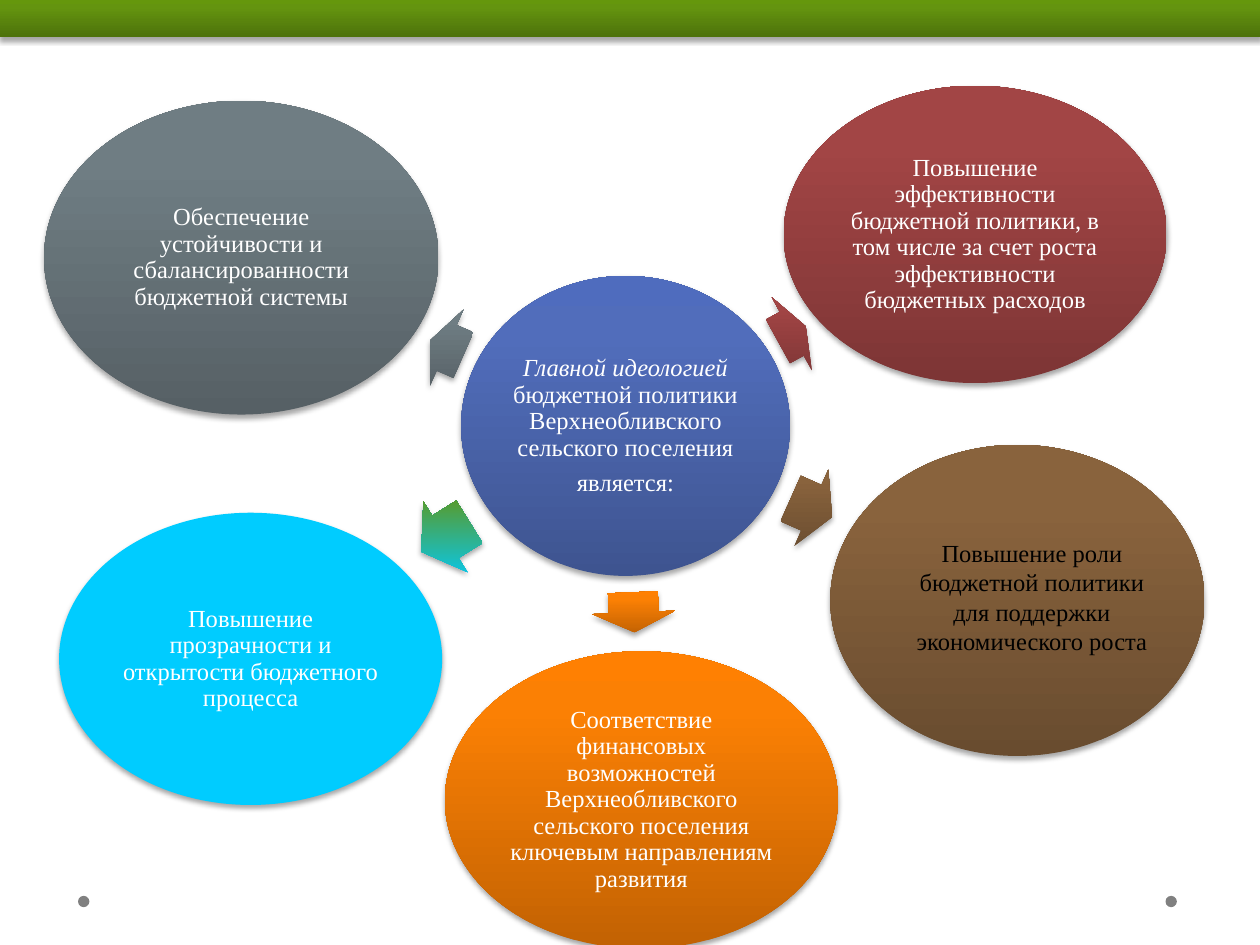
from copy import deepcopy
from math import sqrt

from lxml.etree import SubElement
from pptx import Presentation
from pptx.dml.color import RGBColor
from pptx.enum.shapes import MSO_SHAPE as Shape
from pptx.enum.text import MSO_ANCHOR as Anchor, PP_ALIGN as Align
from pptx.oxml.ns import qn
from pptx.util import Pt

WHITE = RGBColor(0xFF, 0xFF, 0xFF)
BLACK = RGBColor(0x00, 0x00, 0x00)
DOT_GREY = RGBColor(0x80, 0x80, 0x80)
CYAN = RGBColor(0x00, 0xCC, 0xFF)
GREEN_MID = RGBColor(0x64, 0x94, 0x0F)
GREEN_TOP = RGBColor(0x65, 0x97, 0x0C)

# Gradients run from the bottom of a shape to its top
GREEN = (RGBColor(0x4D, 0x72, 0x0B), GREEN_MID, GREEN_TOP)
CYAN_GREEN = (CYAN, GREEN_MID, GREEN_TOP)
BLUE = (RGBColor(0x3E, 0x54, 0x90), RGBColor(0x51, 0x6D, 0xBB), RGBColor(0x4F, 0x6C, 0xBE))
RED = (RGBColor(0x7D, 0x35, 0x35), RGBColor(0xA2, 0x45, 0x45), RGBColor(0xA4, 0x43, 0x43))
ORANGE = (RGBColor(0xC2, 0x62, 0x03), RGBColor(0xFB, 0x80, 0x04), RGBColor(0xFF, 0x80, 0x02))
BROWN = (RGBColor(0x69, 0x4C, 0x2F), RGBColor(0x89, 0x63, 0x3D), RGBColor(0x8B, 0x63, 0x3C))
GREY = (RGBColor(0x56, 0x60, 0x65), RGBColor(0x6F, 0x7D, 0x83), RGBColor(0x6F, 0x7E, 0x84))

CENTER_TEXT = [
    [("Главной идеологией ", True),
     ("бюджетной политики Верхнеобливского сельского поселения", False)],
    [("является:", False)],
]

# arrow box, arrow rotation, arrow fill, middle stop, ellipse box, ellipse fill, text
GOALS = [
    ((443.5, 167, 18, 47.5), 331.3, RED, 0.8, (447.8, 49, 218.9, 169.9), RED,
     "Повышение эффективности бюджетной политики, в том числе за счет роста "
     "эффективности бюджетных расходов"),
    ((350.6, 326.2, 23, 47.5), 87.6, ORANGE, 0.8, (254.2, 372.2, 224.6, 169.9), ORANGE,
     "Соответствие финансовых возможностей Верхнеобливского сельского поселения "
     "ключевым направлениям развития"),
    ((450.7, 266.4, 25.9, 47.5), 24, BROWN, 0.8, (474.5, 254.2, 213.8, 177.8), BROWN, None),
    ((238.3, 283, 32.4, 47.5), 148.1, CYAN_GREEN, 1, (33.8, 293, 218.9, 167), CYAN,
     "Повышение прозрачности и открытости бюджетного процесса"),
    ((244.8, 175, 20.9, 47.5), 203.6, GREY, 0.8, (25.2, 57.6, 225.4, 179.3), GREY,
     "Обеспечение устойчивости и сбалансированности бюджетной системы"),
]


class Painter:
    font_name = "Times New Roman"
    font_size = Pt(14)

    def __init__(self, slide):
        self.slide = slide

    def shape(self, kind, box, fill, middle=0.8, shadow=True):
        shape = self.slide.shapes.add_shape(kind, *map(Pt, box))
        shape.line.fill.background()
        shape.shadow.inherit = False
        if isinstance(fill, RGBColor):
            shape.fill.solid()
            shape.fill.fore_color.rgb = fill
        else:
            self.gradient(shape, fill, middle)
        if shadow:
            self.drop_shadow(shape)
        return shape

    def gradient(self, shape, colors, middle):
        """Fill upwards with three stops, upright whatever the rotation."""
        shape.fill.gradient()
        shape.fill.gradient_angle = 90
        gradient = shape._element.spPr.find(qn("a:gradFill"))
        gradient.set("rotWithShape", "0")
        stops = gradient.find(qn("a:gsLst"))
        stops.append(deepcopy(stops[-1]))
        for stop, color, position in zip(shape.fill.gradient_stops, colors, (0, middle, 1)):
            stop.color.rgb = color
            stop.position = position

    def drop_shadow(self, shape):
        effects = shape._element.spPr.find(qn("a:effectLst"))
        outer = SubElement(effects, qn("a:outerShdw"), blurRad=str(Pt(3.1)),
                           dist=str(Pt(1.8)), dir="5400000", rotWithShape="0")
        color = SubElement(outer, qn("a:srgbClr"), val=str(BLACK))
        SubElement(color, qn("a:alpha"), val="35000")

    def arrow(self, box, rotation, fill, middle):
        arrow = self.shape(Shape.RIGHT_ARROW, box, fill, middle)
        arrow.rotation = rotation
        arrow.adjustments[0] = 0.6
        arrow.adjustments[1] = 0.5

    def text(self, box, paragraphs, color=WHITE):
        """Add centred paragraphs, each a list of (text, italic) runs."""
        frame = self.slide.shapes.add_textbox(*map(Pt, box)).text_frame
        frame.word_wrap = True
        for index, runs in enumerate(paragraphs):
            paragraph = frame.add_paragraph() if index else frame.paragraphs[0]
            paragraph.alignment = Align.CENTER
            for content, italic in runs:
                run = paragraph.add_run()
                run.text = content
                run.font.name = self.font_name
                run.font.size = self.font_size
                run.font.italic = italic
                run.font.color.rgb = color
        return frame

    def ellipse_text(self, box, paragraphs):
        """Place tight text in the rectangle inscribed in an ellipse."""
        left, top, width, height = box
        inset = (1 - sqrt(0.5)) / 2
        frame = self.text((left + width * inset, top + height * inset,
                           width * sqrt(0.5), height * sqrt(0.5)), paragraphs)
        frame.vertical_anchor = Anchor.MIDDLE
        frame.margin_left = frame.margin_right = Pt(1.4)
        frame.margin_top = frame.margin_bottom = Pt(1.4)
        for paragraph in frame.paragraphs:
            paragraph.line_spacing = 0.9
            paragraph.space_after = Pt(4.9)


def main():
    presentation = Presentation()
    presentation.slide_width, presentation.slide_height = Pt(720), Pt(540)
    painter = Painter(presentation.slides.add_slide(presentation.slide_layouts[6]))

    for left in (666, 44.6):
        painter.shape(Shape.OVAL, (left, 511.9, 6.5, 6.5), DOT_GREY, shadow=False)

    center = (263.5, 157.7, 187.9, 171.4)
    painter.shape(Shape.OVAL, center, BLUE)
    painter.ellipse_text(center, CENTER_TEXT)

    for arrow_box, rotation, arrow_fill, middle, box, fill, text in GOALS:
        painter.arrow(arrow_box, rotation, arrow_fill, middle)
        painter.shape(Shape.OVAL, box, fill)
        if text:
            painter.ellipse_text(box, [[(text, False)]])

    painter.text((507.6, 303.8, 164.2, 74.9), [[(
        "Повышение роли бюджетной политики для поддержки экономического роста", False)]], BLACK)
    painter.shape(Shape.RECTANGLE, (0, 0, 720, 20.9), GREEN)
    presentation.save("out.pptx")


if __name__ == "__main__":
    main()
